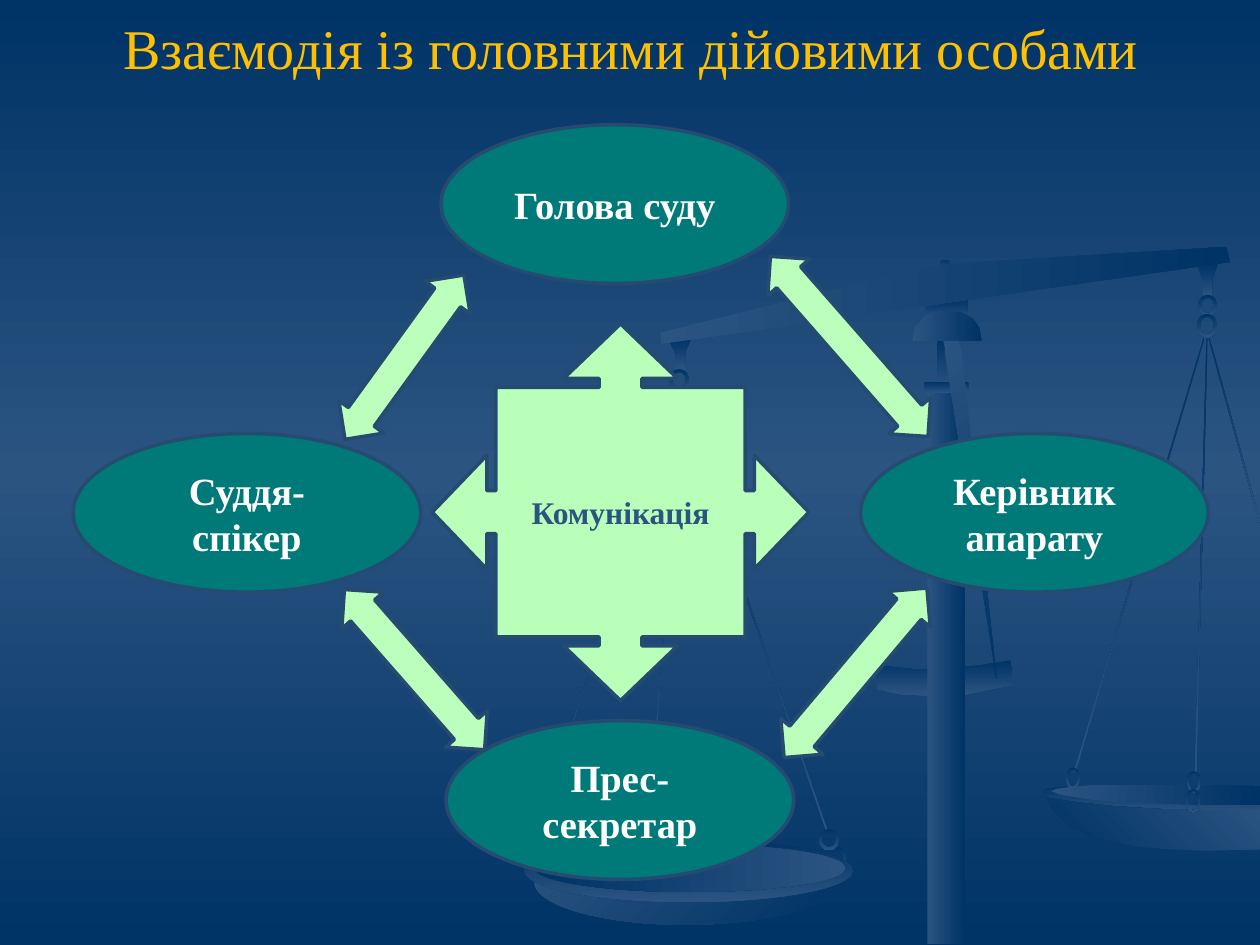
"""Build a slide on the interaction of the main court figures around communication."""
from copy import deepcopy

from pptx import Presentation
from pptx.dml.color import RGBColor
from pptx.enum.shapes import MSO_SHAPE as Shape
from pptx.enum.text import MSO_ANCHOR as Anchor, MSO_AUTO_SIZE as AutoSize, PP_ALIGN as Align
from pptx.util import Inches, Pt

DARK, LIGHT = "003366", "2B5481"
OUTLINE = "264B71"


def rgb(value):
    return RGBColor.from_string(value)


def write(shape, text, size, color, bold):
    frame = shape.text_frame
    frame.text = text
    frame.word_wrap = True
    frame.auto_size = AutoSize.NONE
    frame.vertical_anchor = Anchor.MIDDLE
    para = frame.paragraphs[0]
    para.alignment = Align.CENTER
    font = para.runs[0].font
    font.name, font.size, font.bold = "Times New Roman", Pt(size), bold
    font.color.rgb = rgb(color)


deck = Presentation()
deck.slide_width, deck.slide_height = Inches(10), Inches(7.5)
slide = deck.slides.add_slide(deck.slide_layouts[5])
shapes = slide.shapes

backdrop = slide.background.fill
backdrop.gradient()
backdrop.gradient_angle = 270
for stop, color in zip(backdrop.gradient_stops, (DARK, DARK)):
    stop.color.rgb = rgb(color)
first_stop = slide.element.xpath(".//p:bg//a:gs")[0]
first_stop.addnext(deepcopy(first_stop))
middle_stop = backdrop.gradient_stops[1]
middle_stop.position = 0.5
middle_stop.color.rgb = rgb(LIGHT)

title = shapes.title
title.left, title.top, title.width, title.height = map(Inches, (0.51, 0.05, 9, 0.64))
write(title, "Взаємодія із головними дійовими особами", 32, "FFC000", False)

right_rim = [
    (9.58, 6.24), (8.97, 6.24), (8.75, 6.23), (8.46, 6.24), (8.31, 6.26), (8.27, 6.28),
    (8.32, 6.33), (8.52, 6.38), (8.78, 6.41), (9.14, 6.44), (9.58, 6.45), (10, 6.45), (10, 6.26),
]
right_bowl = [
    (8.31, 6.33), (8.35, 6.42), (8.42, 6.49), (8.52, 6.57), (8.65, 6.63), (8.82, 6.68),
    (9.03, 6.72), (9.28, 6.74), (9.57, 6.75), (10, 6.74), (10, 6.43), (9.53, 6.43),
    (9.18, 6.42), (8.86, 6.4), (8.57, 6.37),
]
right_inside = [
    (9.56, 6.23), (8.77, 6.23), (8.56, 6.24), (8.39, 6.26), (8.34, 6.28), (8.43, 6.31),
    (8.63, 6.34), (8.93, 6.37), (9.33, 6.38), (9.55, 6.39), (10, 6.39), (10, 6.24),
]
bracket = [
    (6.97, 5.28), (7.24, 5.31), (7.39, 5.31), (7.57, 5.3), (7.78, 5.28), (8.02, 5.24),
    (8.04, 5.44), (7.82, 5.48), (7.68, 5.51), (7.51, 5.52), (7.33, 5.52), (7.14, 5.51), (6.96, 5.47),
]
left_hook = [(5.49, 2.68), (5.31, 2.7), (5.36, 2.8), (5.36, 2.94), (5.44, 2.94), (5.44, 2.79)]
right_hook = [(9.67, 2.09), (9.5, 2.1), (9.55, 2.22), (9.55, 2.36), (9.62, 2.36), (9.62, 2.21)]
beam = [(9.73, 1.96), (9.76, 2.08), (5.25, 2.73), (5.24, 2.64), (7.37, 2.12), (7.59, 2.09)]
brace = [
    (7.91, 5.39), (7.5, 2.8), (7.5, 2.76), (7.48, 2.68), (7.6, 2.65), (7.61, 2.74), (7.63, 2.77),
]
cap = [
    (7.52, 2.47), (7.63, 2.48), (7.72, 2.53), (7.77, 2.6), (7.79, 2.71),
    (7.24, 2.71), (7.26, 2.6), (7.32, 2.53), (7.4, 2.48),
]
cords = [
    (9.04, 2.6, 3.6, 16.6), (9.53, 2.66, 3.47, 1.5), (9.79, 2.64, 1.53, 344.6),
    (5.98, 3.15, 3.53, 341), (4.79, 3.16, 3.68, 18.6), (5.27, 3.25, 3.31, 4.2),
]
links = [
    (8.46, 6.09, 0.11, 0.17), (5.31, 2.93, 0.16, 0.17), (5.31, 3.07, 0.16, 0.19),
    (9.51, 2.34, 0.15, 0.17), (9.5, 2.49, 0.16, 0.19), (9.42, 6.12, 0.11, 0.17),
    (5.09, 6.55, 0.15, 0.16), (6.56, 6.72, 0.16, 0.19), (4.17, 6.72, 0.12, 0.16),
    (6.5, 6.58, 0.16, 0.17), (9.41, 6.26, 0.12, 0.19),
]

down, up = (DARK, LIGHT), (LIGHT, DARK)
scale_parts = [
    (Shape.RECTANGLE, (7.34, 2.37, 0.34, 0.18), 0, down, 90),
    (Shape.OVAL, (7.46, 2.06, 0.08, 0.08), 0, down, 90),
    *[(Shape.RECTANGLE, (x, y, 0.01, length), turn, down, 90) for x, y, length, turn in cords],
    (None, bracket, 0, down, 90),
    (None, right_rim, 0, down, 90),
    (None, right_bowl, 0, down, 315),
    (None, right_inside, 0, up, 0),
    (None, left_hook, 0, down, 90),
    (None, right_hook, 0, down, 90),
    *[(Shape.DONUT, link, 0, down, 90) for link in links],
    (None, beam, 0, up, 0),
    (Shape.OVAL, (4.24, 6.66, 2.4, 0.68), 0, up, 45),
    (Shape.OVAL, (4.16, 6.66, 2.61, 0.5), 0, down, 90),
    (Shape.OVAL, (4.24, 6.7, 2.47, 0.38), 0, down, 0),
    (Shape.RECTANGLE, (7.36, 3.08, 0.3, 4.41), 0, up, 0),
    (Shape.RECTANGLE, (7.44, 2.68, 0.13, 0.42), 0, down, 90),
    (Shape.ROUNDED_RECTANGLE, (7.33, 3.03, 0.36, 0.09), 0, down, 90),
    (None, brace, 0, up, 45),
    (None, cap, 0, up, 0),
]
for kind, geometry, turn, colors, angle in scale_parts:
    if kind is None:
        points = [(Inches(x), Inches(y)) for x, y in geometry]
        builder = shapes.build_freeform(*points[0])
        builder.add_line_segments(points[1:], close=True)
        part = builder.convert_to_shape()
    else:
        part = shapes.add_shape(kind, *map(Inches, geometry))
    if kind == Shape.DONUT:
        part.adjustments[0] = 0.15
    part.rotation = turn
    part.shadow.inherit = False
    part.line.fill.background()
    part.fill.gradient()
    part.fill.gradient_angle = (360 - angle) % 360
    for stop, color in zip(part.fill.gradient_stops, colors):
        stop.color.rgb = rgb(color)

roles = [
    ("Голова суду", 3.5, 0.99),
    ("Суддя-спікер", 0.58, 3.44),
    ("Прес-секретар", 3.54, 5.72),
    ("Керівник апарату", 6.83, 3.44),
]
arrows = [
    (2.99, 2.03, 1.61, 35.9), (6.52, 1.8, 1.9, 318.8),
    (3.07, 4.47, 1.69, 318.8), (6.57, 4.46, 1.76, 40.1),
]
callout_adjustments = (0.114, 0.151, 0.145, 0.662)
diagram = [
    *[(Shape.OVAL, (x, y, 2.76, 1.26), 0, (), "007979", (name, 22, "FFFFFF"))
      for name, x, y in roles],
    *[(Shape.UP_DOWN_ARROW, (x, y, 0.44, length), turn, (0.598, 0.576), "BCFFBC", None)
      for x, y, length, turn in arrows],
    (Shape.QUAD_ARROW_CALLOUT, (3.43, 2.57, 2.99, 2.99), 0, callout_adjustments, "B9FFB9",
     ("Комунікація", 18, LIGHT)),
]
for kind, place, turn, adjustments, color, label in diagram:
    item = shapes.add_shape(kind, *map(Inches, place))
    item.rotation = turn
    for index, value in enumerate(adjustments):
        item.adjustments[index] = value
    item.shadow.inherit = False
    item.fill.solid()
    item.fill.fore_color.rgb = rgb(color)
    item.line.color.rgb = rgb(OUTLINE)
    item.line.width = Pt(2)
    if label:
        write(item, *label, True)

deck.save("out.pptx")
